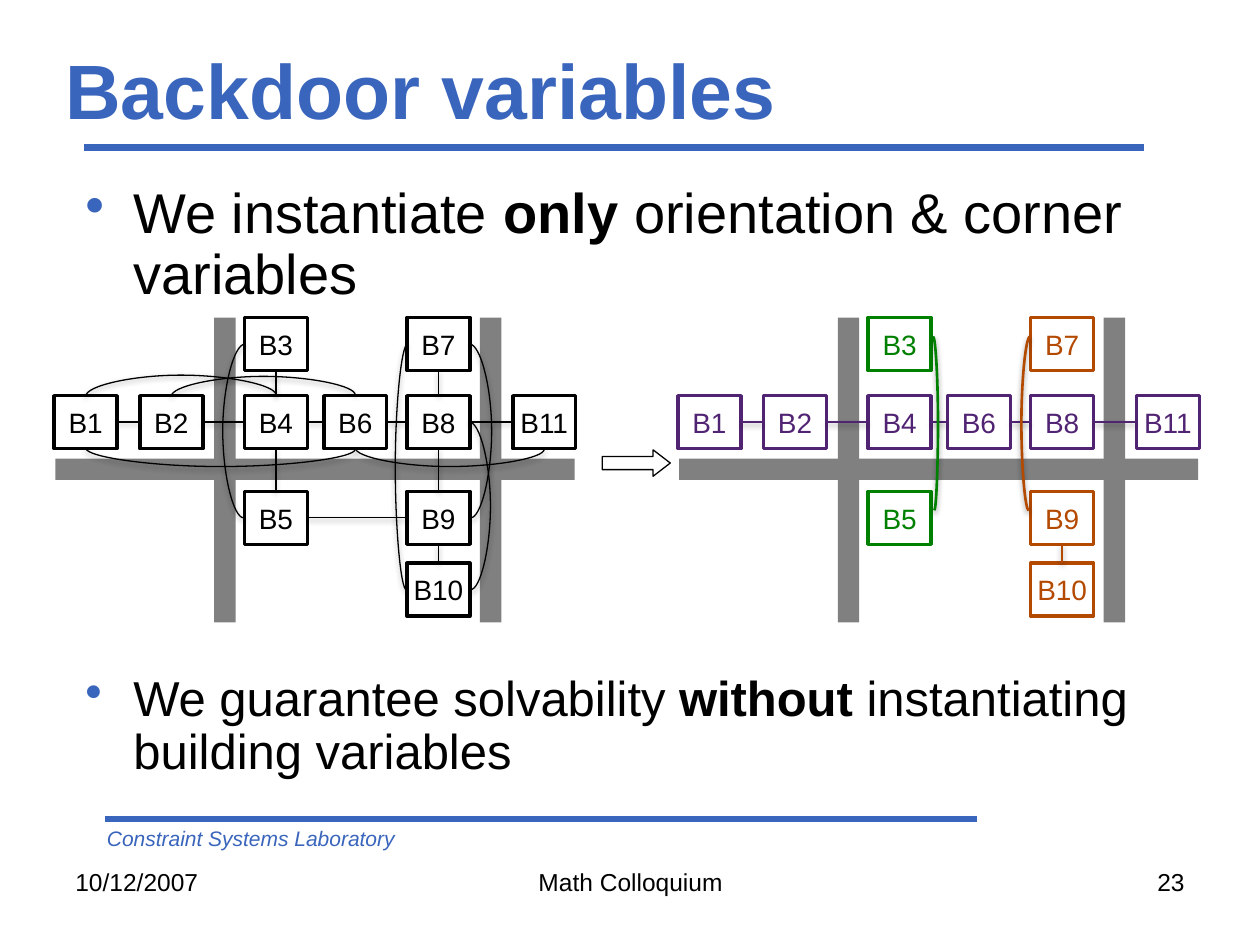
from lxml.etree import SubElement
from pptx import Presentation
from pptx.dml.color import RGBColor
from pptx.enum.shapes import MSO_CONNECTOR as Link, MSO_SHAPE as Shape
from pptx.enum.text import MSO_ANCHOR as Anchor, PP_ALIGN as Align
from pptx.oxml.ns import qn
from pptx.util import Inches, Pt

COLORS = {"blue": "3A65BC", "black": "000000", "white": "FFFFFF", "road": "808080",
          "purple": "512373", "green": "008000", "orange": "B44900"}
FONT = "Arial"

# Street map grid: left edges of the columns, top edges of the rows
COLUMNS = [0.43, 1.11, 1.94, 2.57, 3.23, 4.07]
ROWS = [2.52, 3.14, 3.9, 4.47]
BOX_WIDTH, BOX_HEIGHT = 0.5, 0.42
ROAD = 0.17
SECOND_MAP = 4.95

# Building: (column, row)
BUILDINGS = {"B1": (0, 1), "B2": (1, 1), "B3": (2, 0), "B4": (2, 1), "B5": (2, 2), "B6": (3, 1),
             "B7": (4, 0), "B8": (4, 1), "B9": (4, 2), "B10": (4, 3), "B11": (5, 1)}
STREET = ["B1", "B2", "B4", "B6", "B8", "B11"]
STREET_LINKS = list(zip(STREET, STREET[1:]))
OTHER_LINKS = [("B5", "B9"), ("B3", "B4"), ("B4", "B5"), ("B7", "B8"), ("B8", "B9"), ("B9", "B10")]

# Arc: first building, second building, side, bulge
ARCS = [("B1", "B4", "up", 0.17), ("B1", "B6", "down", 0.15), ("B2", "B6", "up", 0.16),
        ("B3", "B5", "left", 0.18), ("B10", "B7", "left", 0.1), ("B7", "B9", "right", 0.18),
        ("B8", "B10", "right", 0.17), ("B6", "B11", "down", 0.15)]
# Side: rotation in degrees and flips that turn a curve towards it
TURNS = {"right": (0, ""), "left": (180, "V"), "up": (90, "HV"), "down": (270, "H")}


def color(name):
    return RGBColor.from_string(COLORS[name])


def add_text(frame, spans, size=14, ink="black", align=Align.LEFT, anchor=Anchor.TOP,
             italic=False, bullet=False):
    """Write (text, bold) spans as the only paragraph of a frame."""
    frame.word_wrap = True
    frame.vertical_anchor = anchor
    para = frame.paragraphs[0]
    para.alignment = align
    if bullet:
        para.line_spacing = 0.9
        props = para._p.get_or_add_pPr()
        props.set("marL", str(Inches(0.38)))
        props.set("indent", str(-Inches(0.38)))
        tint = SubElement(props, qn("a:buClr"))
        SubElement(tint, qn("a:srgbClr"), val=COLORS["blue"])
        SubElement(props, qn("a:buChar"), char="•")
    for text, bold in spans:
        span = para.add_run()
        span.text = text
        font = span.font
        font.name, font.size, font.bold, font.italic = FONT, Pt(size), bold, italic
        font.color.rgb = color(ink)


def add_box(page, area, spans, **style):
    box = page.shapes.add_textbox(*map(Inches, area))
    add_text(box.text_frame, spans, **style)


def add_figure(page, kind, area, fill, line=None, width=0):
    figure = page.shapes.add_shape(kind, *map(Inches, area))
    figure.shadow.inherit = False
    figure.fill.solid()
    figure.fill.fore_color.rgb = color(fill)
    if line:
        figure.line.color.rgb = color(line)
        figure.line.width = Pt(width)
    else:
        figure.line.fill.background()
    return figure


def add_line(page, start, end, ink, width, kind=Link.STRAIGHT, shadow=False):
    line = page.shapes.add_connector(kind, *map(Inches, (*start, *end)))
    line.line.color.rgb = color(ink)
    line.line.width = Pt(width)
    effects = SubElement(line._element.spPr, qn("a:effectLst"))
    if shadow:
        outer = SubElement(effects, qn("a:outerShdw"), blurRad=str(Pt(3.1)), dist=str(Pt(1.6)),
                           dir="5400000", rotWithShape="0")
        shade = SubElement(outer, qn("a:srgbClr"), val=COLORS["black"])
        SubElement(shade, qn("a:alpha"), val="38000")
    return line


def add_arc(page, start, end, side, bulge, ink, width):
    """Bow a curve from start to end, towards the given side."""
    thin = 0.01
    middle_x, middle_y = (start[0] + end[0]) / 2, (start[1] + end[1]) / 2
    half = max(abs(end[0] - start[0]), abs(end[1] - start[1])) / 2
    arc = add_line(page, (middle_x - thin / 2, middle_y - half),
                   (middle_x + thin / 2, middle_y + half), ink, width, Link.CURVE, shadow=True)
    degrees, flips = TURNS[side]
    frame = arc._element.spPr.find(qn("a:xfrm"))
    frame.set("rot", str(degrees * 60000))
    for flip in flips:
        frame.set("flip" + flip, "1")
    geometry = arc._element.spPr.find(qn("a:prstGeom"))
    guides = geometry.find(qn("a:avLst"))
    if guides is None:
        guides = SubElement(geometry, qn("a:avLst"))
    SubElement(guides, qn("a:gd"), name="adj1", fmla=f"val {round(bulge / thin * 100000)}")


def port(name, side, shift):
    """Middle of one side of a building."""
    column, row = BUILDINGS[name]
    across = {"left": 0, "right": 1}.get(side, 0.5)
    down = {"up": 0, "down": 1}.get(side, 0.5)
    return COLUMNS[column] + shift + across * BOX_WIDTH, ROWS[row] + down * BOX_HEIGHT


def add_map(page, shift, inks):
    """Draw the roads and the buildings."""
    roads = [(0.44, 3.64, 4.12, ROAD), (1.7, 2.52, ROAD, 2.42), (3.81, 2.52, ROAD, 2.42)]
    for left, *rest in roads:
        add_figure(page, Shape.RECTANGLE, (left + shift, *rest), "road")
    for name, (column, row) in BUILDINGS.items():
        ink = inks.get(name, "black")
        area = (COLUMNS[column] + shift, ROWS[row], BOX_WIDTH, BOX_HEIGHT)
        house = add_figure(page, Shape.RECTANGLE, area, "white", ink, 2)
        frame = house.text_frame
        frame.margin_left = frame.margin_right = 0
        add_text(frame, [(name, False)], size=16, ink=ink, align=Align.CENTER,
                 anchor=Anchor.MIDDLE)


def add_links(page, links, shift, ink, width):
    for first, second in links:
        same_row = BUILDINGS[first][1] == BUILDINGS[second][1]
        sides = ("right", "left") if same_row else ("down", "up")
        add_line(page, port(first, sides[0], shift), port(second, sides[1], shift),
                 ink, width, shadow=True)


def main():
    deck = Presentation()
    deck.slide_width, deck.slide_height = Inches(10), Inches(7.5)
    page = deck.slides.add_slide(deck.slide_layouts[6])

    # Rules, title and laboratory name
    add_line(page, (0.67, 1.17), (9.08, 1.17), "blue", 4)
    add_line(page, (0.83, 6.5), (7.75, 6.5), "blue", 4)
    add_box(page, (0.75, 6.5, 5.25, 0.3), [("Constraint Systems Laboratory", False)],
            size=12, ink="blue", italic=True)
    add_box(page, (0.42, 0.33, 9, 0.75), [("Backdoor variables", True)],
            size=44, ink="blue", anchor=Anchor.MIDDLE)

    # Bullets above and below the maps
    add_box(page, (0.58, 1.42, 8.92, 1.02),
            [("We instantiate ", False), ("only", True),
             (" orientation & corner variables", False)], size=32, bullet=True)
    add_box(page, (0.58, 5.3, 8.92, 0.95),
            [("We guarantee solvability ", False), ("without", True),
             (" instantiating building variables", False)], size=28, bullet=True)

    # Left map: every constraint
    add_map(page, 0, {})
    add_links(page, STREET_LINKS + OTHER_LINKS, 0, "black", 0.75)
    for first, second, side, bulge in ARCS:
        add_arc(page, port(first, side, 0), port(second, side, 0), side, bulge, "black", 0.75)

    arrow = add_figure(page, Shape.RIGHT_ARROW, (4.78, 3.57, 0.54, 0.21), "white", "black", 0.75)
    arrow.adjustments[0], arrow.adjustments[1] = 0.5, 0.65

    # Right map: the remaining constraints, by group
    groups = {"purple": STREET, "green": ["B3", "B5"], "orange": ["B7", "B9", "B10"]}
    add_map(page, SECOND_MAP, {name: ink for ink, names in groups.items() for name in names})
    add_links(page, STREET_LINKS, SECOND_MAP, "purple", 1)
    add_links(page, [("B9", "B10")], SECOND_MAP, "orange", 1)
    add_arc(page, (7.41, 2.67), (7.41, 4.05), "right", 0.04, "green", 1.5)
    add_arc(page, (8.17, 2.67), (8.17, 4.05), "left", 0.07, "orange", 1.5)

    # Footer
    for left, width, text, align in [(0.5, 2.33, "10/12/2007", Align.LEFT),
                                     (3.42, 3.17, "Math Colloquium", Align.CENTER),
                                     (7.17, 2.33, "23", Align.RIGHT)]:
        add_box(page, (left, 6.83, width, 0.52), [(text, False)], align=align)

    deck.save("out.pptx")


if __name__ == "__main__":
    main()
